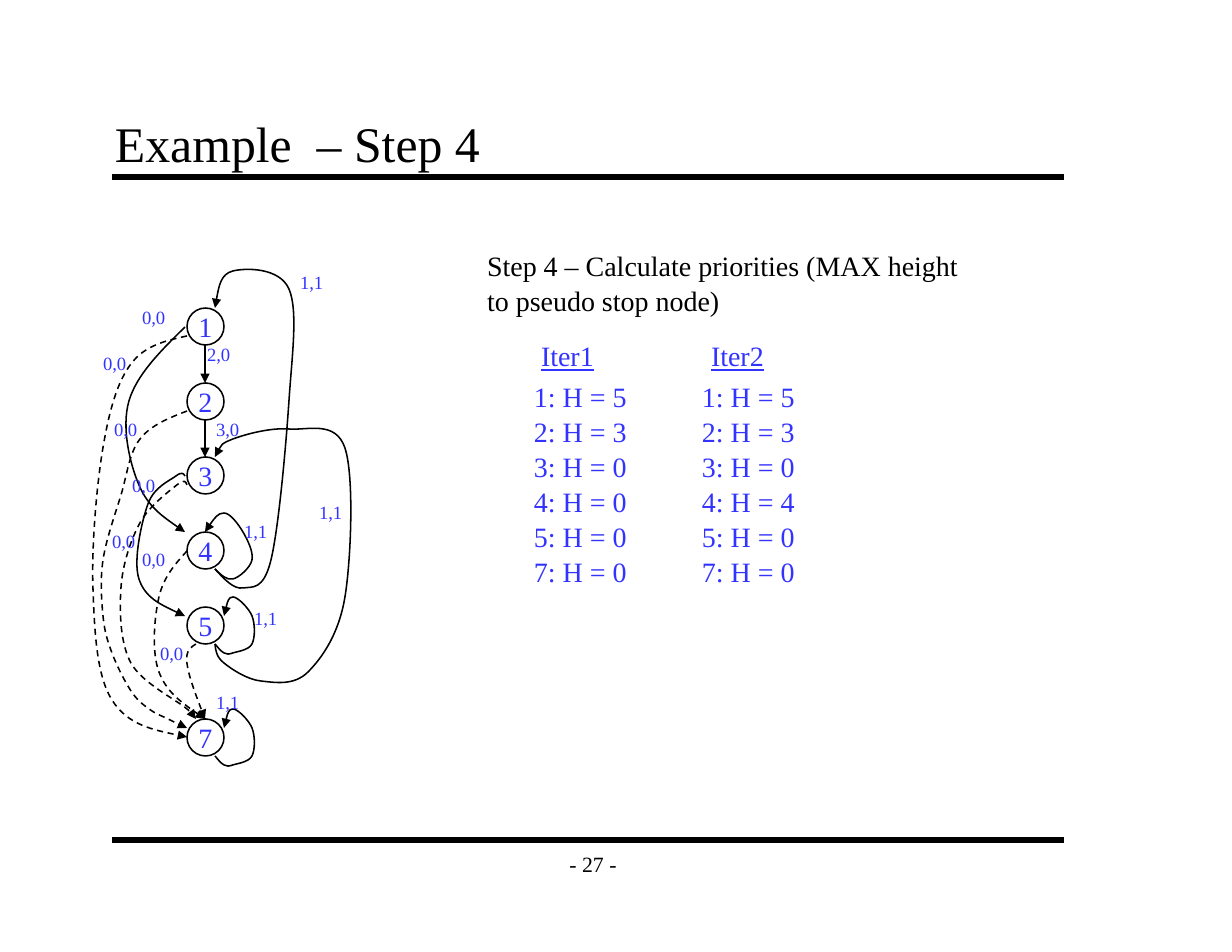
"""Builds the Step 4 slide: a dependence graph beside its node heights."""
import pptx
import pptx.util
import pptx.dml.color
import pptx.enum.dml
import pptx.enum.shapes
import pptx.enum.text
import pptx.oxml.ns
from lxml import etree

PX = 914400 / 112
FONT = "Times New Roman"
HUES = {"ink": "000000", "blue": "3333FF"}
ALIGN = pptx.enum.text.PP_ALIGN
ANCHOR = pptx.enum.text.MSO_ANCHOR

deck = pptx.Presentation()
deck.slide_width, deck.slide_height = round(1232 * PX), round(952 * PX)
slide = deck.slides.add_slide(deck.slide_layouts[6])
shapes = slide.shapes


def write(shape, lines, size, hue, align=ALIGN.LEFT, anchor=ANCHOR.TOP, lead=1.04):
    frame = shape.text_frame
    frame.word_wrap = False
    frame.vertical_anchor = anchor
    frame.text = "\n".join(lines)
    for para in frame.paragraphs:
        para.alignment = align
        para.line_spacing = lead
        para.font.name = FONT
        para.font.size = pptx.util.Pt(size)
        para.font.color.rgb = pptx.dml.color.RGBColor.from_string(HUES[hue])
    return frame


def stroke(shape, width, arrow=False, dash=False):
    shape.line.color.rgb = pptx.dml.color.RGBColor.from_string(HUES["ink"])
    shape.line.width = pptx.util.Pt(width)
    if dash:
        shape.line.dash_style = pptx.enum.dml.MSO_LINE.DASH
    if arrow:
        line = shape.line._get_or_add_ln()
        etree.SubElement(line, pptx.oxml.ns.qn("a:tailEnd"), type="triangle")
    props = shape._element.spPr
    if props.find(pptx.oxml.ns.qn("a:effectLst")) is None:
        etree.SubElement(props, pptx.oxml.ns.qn("a:effectLst"))


links = [
    (112, 177, 1064, 177, 4),
    (112, 840, 1064, 840, 4),
    (205, 345, 205, 383, 1),
    (205, 420, 205, 457, 1),
]
for left, top, right, bottom, width in links:
    link = shapes.add_connector(
        pptx.enum.shapes.MSO_CONNECTOR.STRAIGHT,
        *(round(n * PX) for n in (left, top, right, bottom)))
    stroke(link, width, arrow=width == 1)

nodes = {"1": 308, "2": 383, "3": 457, "4": 532, "5": 607, "7": 719}
for name, top in nodes.items():
    node = shapes.add_shape(
        pptx.enum.shapes.MSO_SHAPE.OVAL,
        *(round(n * PX) for n in (187, top, 37, 37)))
    node.fill.background()
    stroke(node, 1)
    write(node, [name], 18, "blue", ALIGN.CENTER, ANCHOR.MIDDLE, 1)

loop = [(215, 644), (224, 653), (233, 653), (252, 644), (252, 616), (233, 597), (224, 616)]
solid = [
    [(215, 569), (243, 588), (271, 560), (289, 401), (289, 289), (233, 271), (215, 308)],
    [(215, 569), (233, 579), (252, 560), (243, 532), (224, 513), (205, 532)],
    loop,
    [(x, y + 112) for x, y in loop],
    [(215, 644), (224, 663), (261, 681), (308, 672), (345, 597), (345, 448),
     (289, 429), (233, 439), (215, 457)],
    [(185, 327), (129, 401), (139, 485), (185, 532)],
    [(185, 476), (176, 476), (148, 504), (139, 579), (185, 616)],
]
dashed = [
    [(187, 336), (131, 364), (103, 448), (93, 588), (112, 700), (187, 737)],
    [(187, 411), (140, 439), (121, 495), (103, 560), (103, 616), (112, 653),
     (131, 691), (149, 709), (168, 719), (187, 728)],
    [(187, 485), (177, 485), (140, 523), (121, 588), (131, 663), (187, 709), (196, 719)],
    [(187, 551), (159, 597), (159, 672), (205, 719)],
    [(196, 644), (187, 663), (205, 719)],
]
for knots in solid + dashed:
    steps = [((c[0] - a[0]) / 6, (c[1] - a[1]) / 6) for a, c in zip(knots, knots[2:])]
    pulls = []
    for (x, y), (dx, dy) in zip(knots[1:-1], steps):
        pulls += [(x - dx, y - dy), (x + dx, y + dy)]
    ends = [((p[0] + q[0]) / 2, (p[1] + q[1]) / 2)
            for p, q in ((knots[0], pulls[0]), (knots[-1], pulls[-1]))]
    pulls = [ends[0], *pulls, ends[1]]
    trail = []
    for i, knot in enumerate(knots[1:]):
        trail += [pulls[2 * i], pulls[2 * i + 1], knot]
    pen = shapes.build_freeform(*(round(n * PX) for n in knots[0]), scale=1.0)
    pen.add_line_segments([(round(x * PX), round(y * PX)) for x, y in trail], close=False)
    curve = pen.convert_to_shape()
    legs = list(curve._element.iter(pptx.oxml.ns.qn("a:lnTo")))
    for i in range(0, len(legs), 3):
        bend = etree.SubElement(legs[i].getparent(), pptx.oxml.ns.qn("a:cubicBezTo"))
        for leg in legs[i:i + 3]:
            bend.append(leg[0])
            leg.getparent().remove(leg)
    curve.fill.background()
    stroke(curve, 1, arrow=True, dash=knots in dashed)

tags = {
    "0,0": [(131, 299), (103, 411), (121, 467), (131, 541), (149, 635), (92, 345), (101, 523)],
    "1,1": [(205, 684), (289, 264), (308, 494), (243, 600), (233, 513)],
    "2,0": [(196, 336)],
    "3,0": [(205, 411)],
}
for tag, spots in tags.items():
    for left, top in spots:
        box = shapes.add_textbox(*(round(n * PX) for n in (left, top, 46, 34)))
        write(box, [tag], 12, "blue")

step = ["Step 4 – Calculate priorities (MAX height", "to pseudo stop node)"]
box = shapes.add_textbox(*(round(n * PX) for n in (476, 242, 494, 78)))
write(box, step, 18, "ink")

iters = [
    ("Iter1", 530, 523, [5, 3, 0, 0, 0, 0]),
    ("Iter2", 700, 691, [5, 3, 0, 4, 0, 0]),
]
for head, start, left, highs in iters:
    box = shapes.add_textbox(*(round(n * PX) for n in (start, 332, 75, 45)))
    write(box, [head], 18, "blue").paragraphs[0].font.underline = True
    box = shapes.add_textbox(*(round(n * PX) for n in (left, 373, 115, 213)))
    write(box, [f"{n}: H = {h}" for n, h in zip(nodes, highs)], 18, "blue")

banners = [
    ("Example  – Step 4", (103, 103, 952, 75), 32, ALIGN.LEFT, ANCHOR.BOTTOM),
    ("- 27 -", (551, 840, 84, 47), 14, ALIGN.CENTER, ANCHOR.MIDDLE),
]
for text, area, size, align, anchor in banners:
    box = shapes.add_textbox(*(round(n * PX) for n in area))
    frame = write(box, [text], size, "ink", align, anchor, 1)
    frame.word_wrap = size == 32
    frame.margin_left = frame.margin_right = round(12 * PX)
    frame.margin_top = frame.margin_bottom = round(6 * PX)

deck.save("out.pptx")
